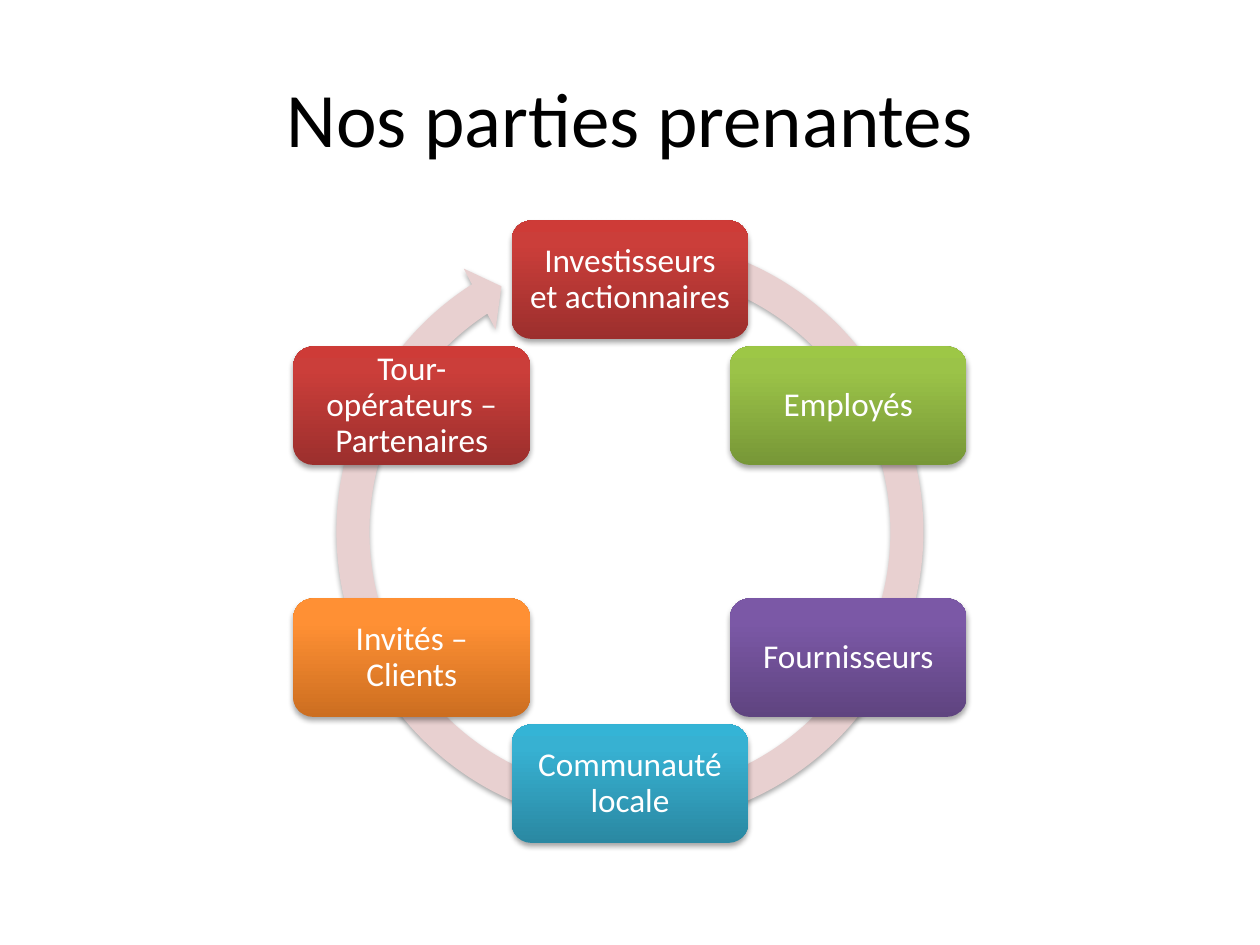
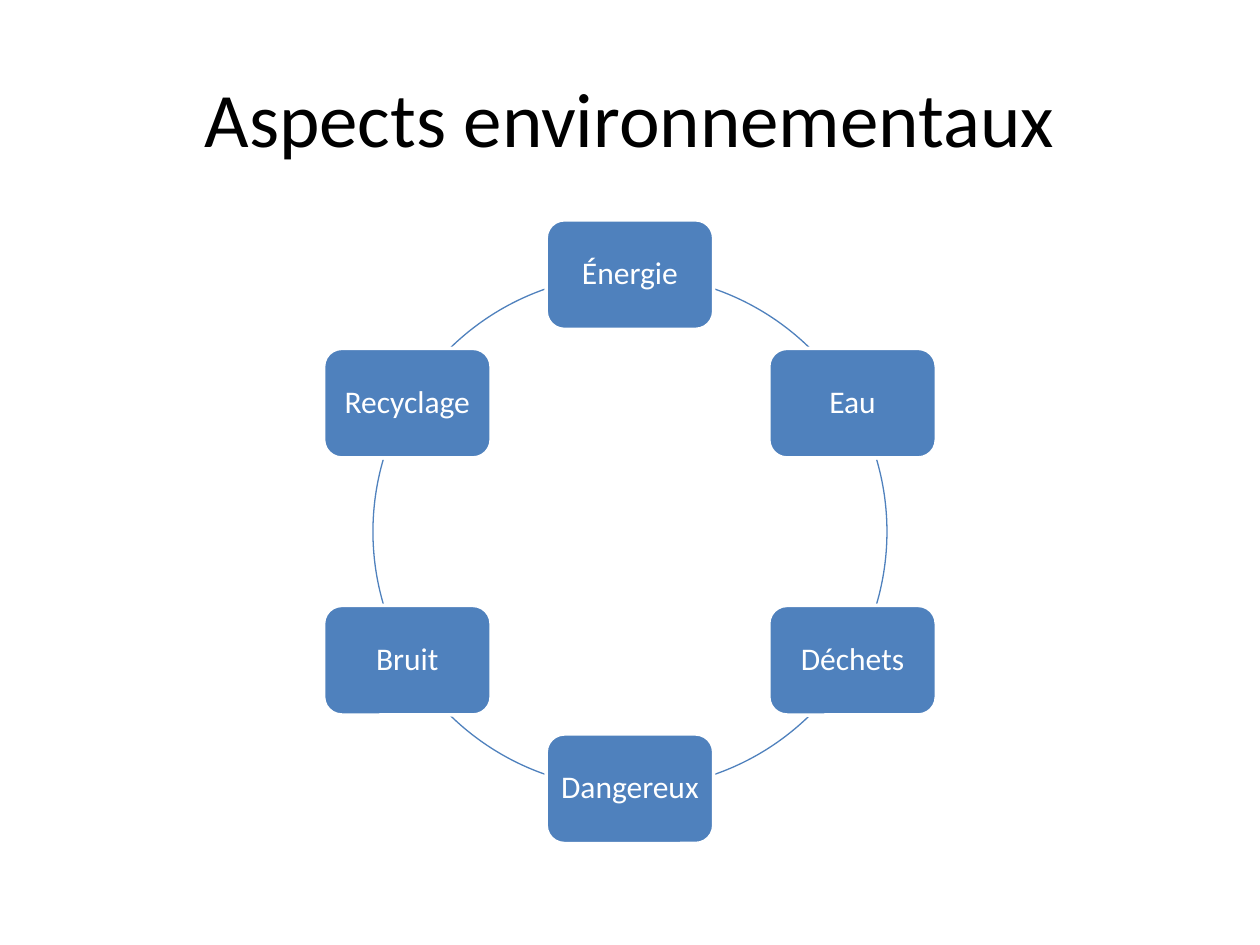
from copy import deepcopy
from dataclasses import dataclass
from math import cos, radians, sin

from lxml import etree
from pptx import Presentation
from pptx import util as u
from pptx.dml.color import RGBColor
from pptx.enum import shapes, text
from pptx.oxml.ns import qn

# Each node: label, gradient from bottom to top
PARTIES = [
    ("Investisseurs et actionnaires", ("9C2F2D", "CB3E3A", "CE3B37")),
    ("Employés", ("779737", "9BC348", "9DC746")),
    ("Fournisseurs", ("5F4480", "7B58A6", "7C57A8")),
    ("Communauté locale", ("2A88A2", "37B1D2", "34B4D6")),
    ("Invités – Clients", ("CC6E20", "FF9034", "FF9136")),
    ("Tour-opérateurs – Partenaires", ("9C2F2D", "CB3E3A", "CE3B37")),
]
ASPECTS = ["Énergie", "Eau", "Déchets", "Dangereux", "Bruit", "Recyclage"]

# Visible parts of the thin circle, in degrees clockwise from the right
ARCS = [(-16.3, 16.3), (45.4, 70.8), (109.2, 134.6),
        (163.7, 196.3), (225.4, 250.8), (289.2, 314.6)]
ARROW = (0.053, 3.126, 142.288, 171.266, 0.055)
STOPS = (0, 0.8, 1)
MID = (5, 4.22)


@dataclass(frozen=True)
class Theme:
    font: str = "Calibri"
    ink: str = "000000"
    white: str = "FFFFFF"
    blue: str = "4F81BD"
    rose: str = "E8D0D0"
    title: int = 44
    party: int = 19
    aspect: int = 18


THEME = Theme()


def rgb(code):
    return RGBColor.from_string(code)


def write(shape, words, size, color, inset=0.1, lead=None):
    frame = shape.text_frame
    frame.text = words
    frame.word_wrap = True
    frame.vertical_anchor = text.MSO_ANCHOR.MIDDLE
    frame.margin_left = frame.margin_right = u.Inches(inset)
    frame.margin_top = frame.margin_bottom = u.Inches(min(inset, 0.08))
    para = frame.paragraphs[0]
    para.alignment = text.PP_ALIGN.CENTER
    para.line_spacing = lead
    font = para.runs[0].font
    font.name, font.size = THEME.font, u.Pt(size)
    font.color.rgb = rgb(color)


def place(slide, kind, mid, wide, high):
    """Add a plain shape centred on a point, without line or shadow."""
    x, y = mid
    shape = slide.shapes.add_shape(
        kind, u.Inches(x - wide / 2), u.Inches(y - high / 2),
        u.Inches(wide), u.Inches(high))
    shape.shadow.inherit = False
    shape.line.fill.background()
    return shape


def paint(shape, color):
    shape.fill.solid()
    shape.fill.fore_color.rgb = rgb(color)


def shade(shape, colors):
    """Fill with a three-stop gradient that runs upwards."""
    shape.fill.gradient()
    shape.fill.gradient_angle = 90
    stops = shape._element.spPr.find(qn("a:gradFill")).find(qn("a:gsLst"))
    stops.append(deepcopy(stops[-1]))
    for stop, place_at, color in zip(shape.fill.gradient_stops, STOPS, colors):
        stop.position = place_at
        stop.color.rgb = rgb(color)


def lift(shape):
    """Add a soft shadow below the shape."""
    effects = shape._element.spPr.find(qn("a:effectLst"))
    outer = etree.SubElement(
        effects, qn("a:outerShdw"), blurRad=str(u.Pt(3.1)),
        dist=str(u.Pt(1.8)), dir="5400000", rotWithShape="0")
    tint = etree.SubElement(outer, qn("a:srgbClr"), val=THEME.ink)
    etree.SubElement(tint, qn("a:alpha"), val="35000")


def nodes(slide, labels, radius, wide, high, size, inset):
    """Yield labelled boxes, spread clockwise from the top of the circle."""
    for i, label in enumerate(labels):
        turn = radians(360 * i / len(labels) - 90)
        mid = MID[0] + radius * cos(turn), MID[1] + radius * sin(turn)
        box = place(slide, shapes.MSO_SHAPE.ROUNDED_RECTANGLE, mid, wide, high)
        write(box, label, size, THEME.white, inset, 0.9)
        yield box


def start(deck, title):
    slide = deck.slides.add_slide(deck.slide_layouts[6])
    box = slide.shapes.add_textbox(
        u.Inches(0.5), u.Inches(0.3), u.Inches(9), u.Inches(1.25))
    write(box, title, THEME.title, THEME.ink)
    return slide


def parties(deck):
    slide = start(deck, "Nos parties prenantes")
    ring = place(slide, shapes.MSO_SHAPE.CIRCULAR_ARROW, MID, 4.94, 4.94)
    for i, value in enumerate(ARROW):
        ring.adjustments[i] = value
    paint(ring, THEME.rose)
    lift(ring)
    labels, fills = zip(*PARTIES)
    boxes = nodes(slide, labels, 2, 1.88, 0.94, THEME.party, 0.08)
    for box, colors in zip(boxes, fills):
        shade(box, colors)
        lift(box)


def aspects(deck):
    slide = start(deck, "Aspects environnementaux")
    for span in ARCS:
        arc = place(slide, shapes.MSO_SHAPE.ARC, MID, 4.08, 4.08)
        for i, angle in enumerate(span):
            arc.adjustments[i] = angle % 360 * 0.6  # 60000 units per degree
        arc.fill.background()
        arc.line.color.rgb = rgb(THEME.blue)
        arc.line.width = u.Pt(0.75)
    for box in nodes(slide, ASPECTS, 2.04, 1.33, 0.87, THEME.aspect, 0.07):
        paint(box, THEME.blue)
        box.line.color.rgb = rgb(THEME.white)
        box.line.width = u.Pt(2)


def main():
    deck = Presentation()
    deck.slide_width, deck.slide_height = u.Inches(10), u.Inches(7.5)
    parties(deck)
    aspects(deck)
    deck.save("out.pptx")


if __name__ == "__main__":
    main()
